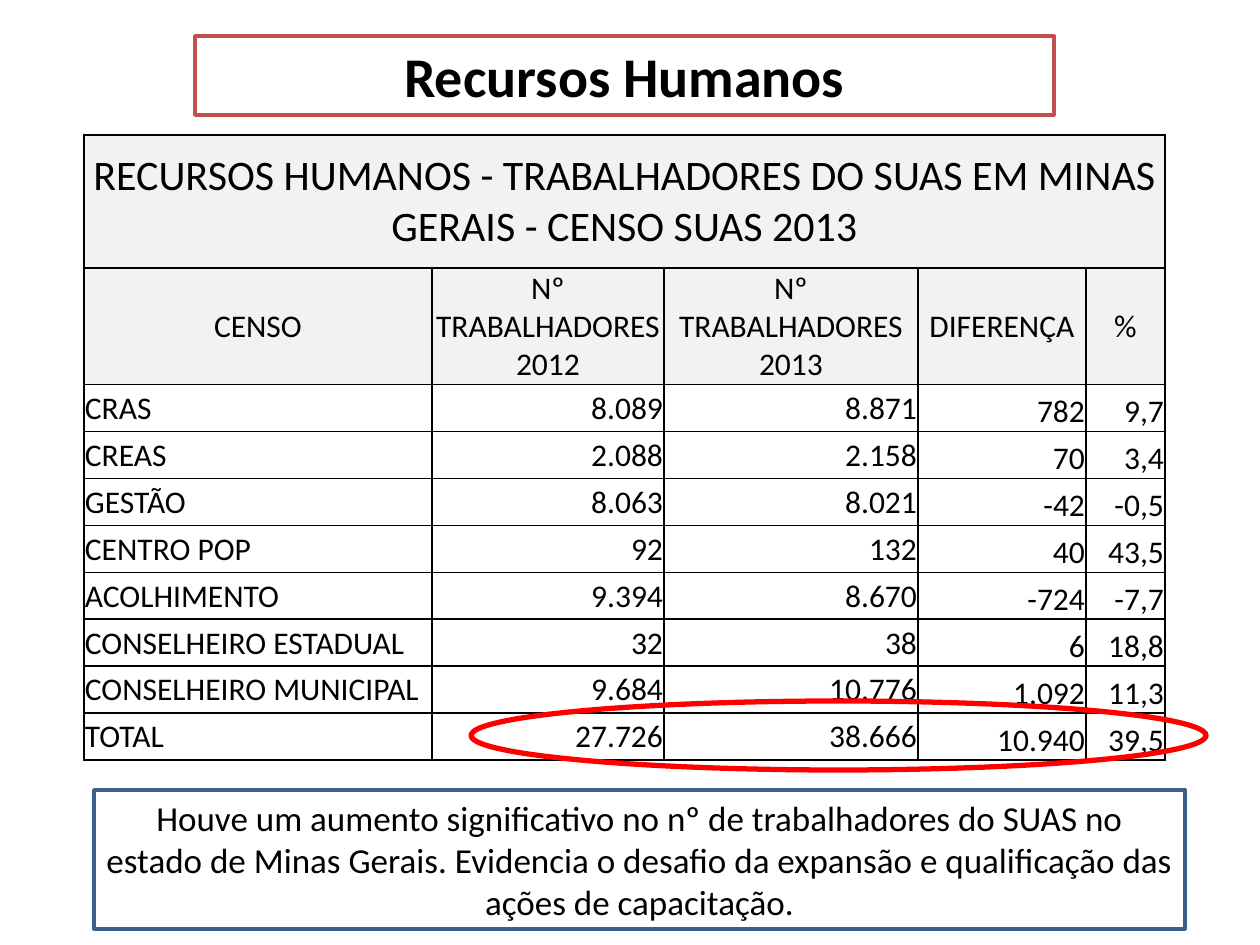
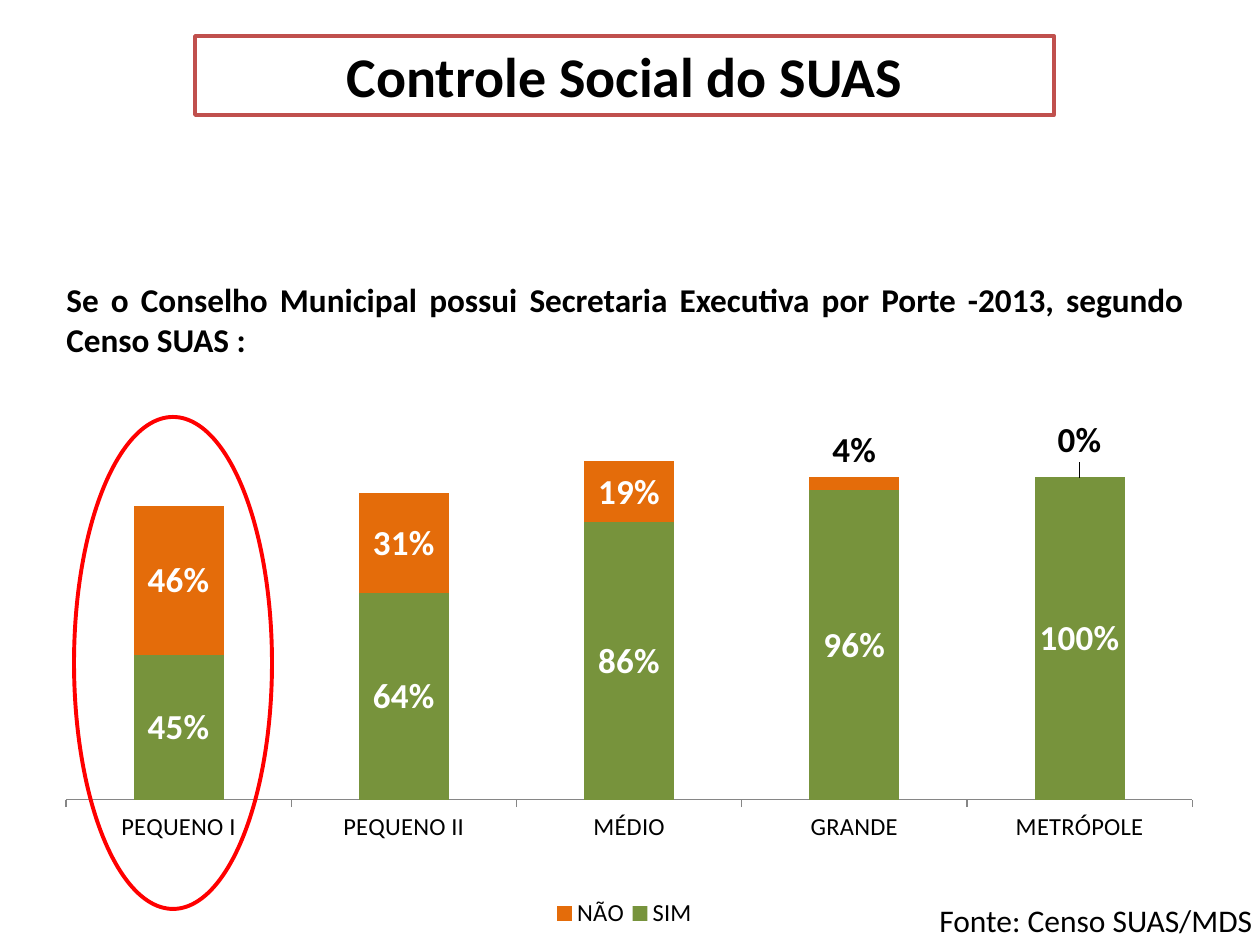
from lxml import etree
from pptx import Presentation, util as u
from pptx.chart.data import CategoryChartData
from pptx.dml.color import RGBColor
from pptx.enum import chart as ch, shapes, text
from pptx.oxml import parse_xml
from pptx.oxml.ns import nsdecls, qn

FONT = "Calibri"
BLACK, WHITE, RED = "000000", "FFFFFF", "FF0000"
BRICK, BLUE, GRAY = "C0504D", "3A5F8C", "F2F2F2"
AL, MID = text.PP_ALIGN, text.MSO_ANCHOR.MIDDLE
SHAPE = shapes.MSO_SHAPE

STAFF = {
    "title": "Recursos Humanos",
    "head": "RECURSOS HUMANOS - TRABALHADORES DO SUAS EM MINAS GERAIS - CENSO SUAS 2013",
    "rows": [
        ("CENSO", "Nº TRABALHADORES 2012", "Nº TRABALHADORES 2013", "DIFERENÇA", "%"),
        ("CRAS", "8.089", "8.871", "782", "9,7"),
        ("CREAS", "2.088", "2.158", "70", "3,4"),
        ("GESTÃO", "8.063", "8.021", "-42", "-0,5"),
        ("CENTRO POP", "92", "132", "40", "43,5"),
        ("ACOLHIMENTO", "9.394", "8.670", "-724", "-7,7"),
        ("CONSELHEIRO ESTADUAL", "32", "38", "6", "18,8"),
        ("CONSELHEIRO MUNICIPAL", "9.684", "10.776", "1.092", "11,3"),
        ("TOTAL", "27.726", "38.666", "10.940", "39,5"),
    ],
    "note": "Houve um aumento significativo no nº de trabalhadores do SUAS no estado "
            "de Minas Gerais. Evidencia o desafio da expansão e qualificação das ações "
            "de capacitação.",
}
COLS = (348, 232, 254, 168, 79)
HEAD_H, NAMES_H, ROW_H = 133, 115, 47

COUNCIL = {
    "title": "Controle Social do SUAS",
    "ask": "Se o Conselho Municipal possui Secretaria Executiva por Porte -2013, "
           "segundo Censo SUAS :",
    "sizes": ("PEQUENO I", "PEQUENO II", "MÉDIO", "GRANDE", "METRÓPOLE"),
    "series": [
        ("SIM", "77933C", (0.45, 0.64, 0.86, 0.96, 1)),
        ("NÃO", "E46C0A", (0.46, 0.31, 0.19, 0.04, 0)),
    ],
    "source": "Fonte: Censo SUAS/MDS",
}
RAISED = {3: -0.06, 4: -0.065}  # labels of NÃO lifted above their bars


def px(n):
    return u.Emu(round(n * 914400 / 126))


def rgb(code):
    return RGBColor.from_string(code)


def style(font, size, color=BLACK, bold=False):
    font.name, font.size, font.bold = FONT, u.Pt(size), bold
    font.color.rgb = rgb(color)


def write(frame, words, size, align=AL.LEFT, bold=False):
    frame.word_wrap = True
    par = frame.paragraphs[0]
    par.alignment = align
    run = par.add_run()
    run.text = words
    style(run.font, size, bold=bold)
    return par


def paint(shape, line, width, fill=None):
    if fill:
        shape.fill.solid()
        shape.fill.fore_color.rgb = rgb(fill)
    else:
        shape.fill.background()
    shape.line.color.rgb = rgb(line)
    shape.line.width = u.Pt(width)


def draw(slide, kind, box, line, width, fill=None):
    shape = slide.shapes.add_shape(kind, *map(px, box))
    shape.shadow.inherit = False
    paint(shape, line, width, fill)
    return shape


def label(slide, box, words, size, align=AL.LEFT, bold=False):
    frame = slide.shapes.add_textbox(*map(px, box)).text_frame
    return write(frame, words, size, align, bold)


def start(deck, words):
    """Add a slide with the framed title."""
    slide = deck.slides.add_slide(deck.slide_layouts[5])
    title = slide.shapes.title
    title.left, title.top, title.width, title.height = map(px, (195, 36, 859, 79))
    title._element.spPr.append(parse_xml(
        f'<a:prstGeom {nsdecls("a")} prst="roundRect"><a:avLst/></a:prstGeom>'))
    paint(title, BRICK, 2, WHITE)
    frame = title.text_frame
    frame.auto_size = text.MSO_AUTO_SIZE.NONE
    frame.vertical_anchor = MID
    write(frame, words, 32, AL.CENTER, True)
    return slide


def edge(cell):
    """Draw a thin black border on all four sides."""
    props = cell._tc.get_or_add_tcPr()
    for i, side in enumerate(("lnL", "lnR", "lnT", "lnB")):
        props.insert(i, parse_xml(
            f'<a:{side} {nsdecls("a")} w="12700"><a:solidFill>'
            f'<a:srgbClr val="{BLACK}"/></a:solidFill></a:{side}>'))


def fill_cell(cell, words, row, col):
    top = row < 2
    if top:
        cell.fill.solid()
        cell.fill.fore_color.rgb = rgb(GRAY)
    else:
        cell.fill.background()
    edge(cell)
    cell.margin_left = cell.margin_right = cell.margin_top = px(1)
    cell.margin_bottom = 0
    low = not top and col > 2
    cell.vertical_anchor = text.MSO_ANCHOR.BOTTOM if low else MID
    align = AL.CENTER if top else AL.RIGHT if col else AL.LEFT
    if words:
        write(cell.text_frame, words, 18 if row else 24, align)


def add_staff(slide):
    rows = [(STAFF["head"],) + ("",) * (len(COLS) - 1)] + STAFF["rows"]
    highs = [HEAD_H, NAMES_H] + [ROW_H] * (len(rows) - 2)
    box = (84, 135, sum(COLS), sum(highs))
    table = slide.shapes.add_table(len(rows), len(COLS), *map(px, box)).table
    table.first_row = table.horz_banding = False
    for col, wide in zip(table.columns, COLS):
        col.width = px(wide)
    for row, high in zip(table.rows, highs):
        row.height = px(high)
    table.cell(0, 0).merge(table.cell(0, len(COLS) - 1))
    for r, row in enumerate(rows):
        for c, words in enumerate(row):
            fill_cell(table.cell(r, c), words, r, c)


def layout(x, y, w=None, h=None, inner=False):
    """Build a manual chart layout, in fractions of the chart."""
    root = parse_xml(f'<c:layout {nsdecls("c")}><c:manualLayout/></c:layout>')
    parts = [("layoutTarget", "inner")] if inner else []
    if w:
        parts += [("xMode", "edge"), ("yMode", "edge")]
    parts += [("x", x), ("y", y)]
    if w:
        parts += [("w", w), ("h", h)]
    for tag, val in parts:
        etree.SubElement(root[0], qn("c:" + tag)).set("val", str(val))
    return root


def add_bars(slide):
    data = CategoryChartData(number_format="0%")
    data.categories = COUNCIL["sizes"]
    for name, _, vals in COUNCIL["series"]:
        data.add_series(name, vals)
    chart = slide.shapes.add_chart(ch.XL_CHART_TYPE.COLUMN_STACKED,
                                   *map(px, (59, 373, 1166, 566)), data).chart
    style(chart.font, 10)
    chart.has_title = False
    plot = chart.plots[0]
    plot.gap_width, plot.overlap, plot.vary_by_categories = 150, 100, False

    val = chart.value_axis
    val.minimum_scale, val.maximum_scale = 0, 1.2
    val.has_major_gridlines = val.visible = False
    cat = chart.category_axis
    cat.major_tick_mark = ch.XL_TICK_MARK.OUTSIDE
    cat.format.line.color.rgb = rgb("868686")
    style(cat.tick_labels.font, 14)

    for bars, (_, color, _) in zip(plot.series, COUNCIL["series"]):
        bars.format.fill.solid()
        bars.format.fill.fore_color.rgb = rgb(color)
        tags = bars.data_labels
        tags.show_value = True
        tags.number_format, tags.number_format_is_linked = "0%", False
        style(tags.font, 20, WHITE, True)
    for i, rise in RAISED.items():
        tag = plot.series[1].points[i].data_label
        style(tag.font, 20, BLACK, True)
        tag._dLbl.insert(1, layout(0, rise))

    area = chart._chartSpace.chart.plotArea
    for old in area.findall(qn("c:layout")):
        area.remove(old)
    area.insert(0, layout(0.006, 0.07, 0.966, 0.684, True))
    chart.has_legend = True
    key = chart.legend
    key.position = ch.XL_LEGEND_POSITION.RIGHT
    key.include_in_layout = False
    style(key.font, 14)
    for old in key._element.findall(qn("c:layout")):
        key._element.remove(old)
    key._element.find(qn("c:legendPos")).addnext(layout(0.42, 0.92, 0.13, 0.07))


def main():
    deck = Presentation()
    deck.slide_width, deck.slide_height = px(1260), px(945)

    slide = start(deck, STAFF["title"])
    add_staff(slide)
    draw(slide, SHAPE.OVAL, (471, 701, 735, 69), RED, 3)
    note = draw(slide, SHAPE.RECTANGLE, (94, 790, 1091, 139), BLUE, 2, WHITE)
    note.text_frame.vertical_anchor = MID
    write(note.text_frame, STAFF["note"], 20, AL.CENTER)

    slide = start(deck, COUNCIL["title"])
    add_bars(slide)
    ask = label(slide, (54, 273, 1142, 118), COUNCIL["ask"], 19, AL.JUSTIFY, True)
    ask.space_before = u.Pt(4)
    draw(slide, SHAPE.OVAL, (74, 417, 198, 492), RED, 2.25)
    label(slide, (927, 895, 456, 50), COUNCIL["source"], 18)

    deck.save("out.pptx")


if __name__ == "__main__":
    main()
